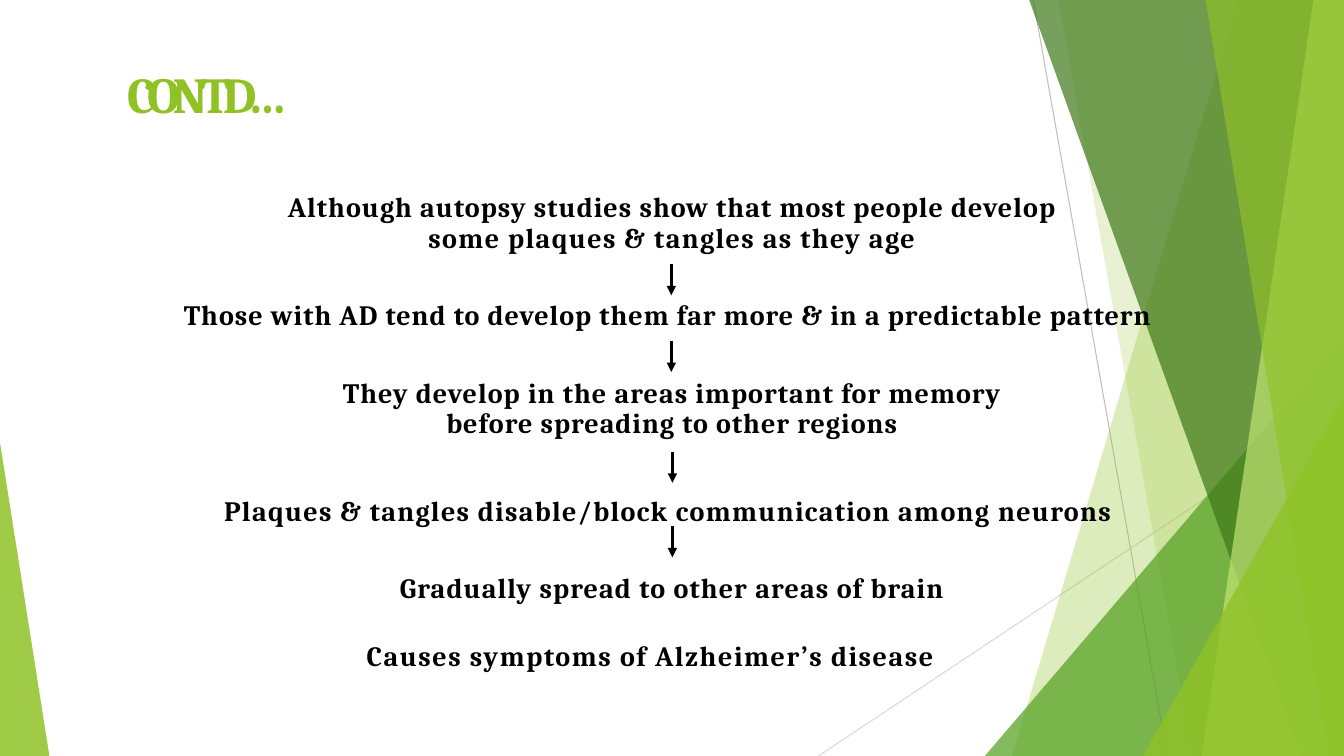
from dataclasses import dataclass

from lxml import etree
from pptx import Presentation
from pptx.dml.color import RGBColor
from pptx.enum.shapes import MSO_CONNECTOR, MSO_SHAPE
from pptx.enum.text import PP_ALIGN
from pptx.oxml.ns import qn
from pptx.util import Inches, Pt

STRAIGHT = MSO_CONNECTOR.STRAIGHT
TRIANGLE = MSO_SHAPE.ISOSCELES_TRIANGLE
LEFT, CENTER = PP_ALIGN.LEFT, PP_ALIGN.CENTER


@dataclass(frozen=True)
class Theme:
    font: str = "Cambria"
    title_size: float = 36
    body_size: float = 20
    ink: str = "000000"
    lime: str = "90C226"
    pale: str = "C0E474"
    leaf: str = "54A021"
    forest: str = "3F7819"
    grey: str = "BFBFBF"
    light_grey: str = "D9D9D9"


class Deck:
    """Draws on one slide; lengths are percent of the slide's width and height."""

    def __init__(self, prs, theme):
        self.theme = theme
        self.col, self.row = prs.slide_width / 100, prs.slide_height / 100
        self.s = prs.slides.add_slide(prs.slide_layouts[6])

    def at(self, x, y):
        return round(x * self.col), round(y * self.row)

    def paint(self, sp, color, opacity):
        sp.shadow.inherit = False
        sp.fill.solid()
        sp.fill.fore_color.rgb = RGBColor.from_string(color)
        sp.line.fill.background()
        clr = sp._element.spPr.find(qn("a:solidFill")).find(qn("a:srgbClr"))
        etree.SubElement(clr, qn("a:alpha"), val=str(opacity * 1000))

    def facet(self, top, bottom, color, opacity):
        """Panel with a slanted left edge that reaches the right edge of the slide."""
        points = [self.at(x, y) for x, y in
                  ((top, 0), (100, 0), (100, 100), (bottom, 100))]
        fb = self.s.shapes.build_freeform(*points[0], scale=1.0)
        fb.add_line_segments(points[1:], close=True)
        self.paint(fb.convert_to_shape(), color, opacity)

    def corner(self, x, y, width, apex, color, opacity):
        """Right triangle standing on the bottom edge."""
        sp = self.s.shapes.add_shape(
            TRIANGLE, *self.at(x, y), *self.at(width, 100 - y))
        sp.adjustments[0] = apex
        self.paint(sp, color, opacity)

    def line(self, x1, y1, x2, y2, color, width, arrow=False):
        cn = self.s.shapes.add_connector(
            STRAIGHT, *self.at(x1, y1), *self.at(x2, y2))
        cn.line.color.rgb = RGBColor.from_string(color)
        cn.line.width = Pt(width)
        spPr = cn._element.spPr
        if arrow:
            etree.SubElement(spPr.find(qn("a:ln")), qn("a:tailEnd"), type="triangle")
        etree.SubElement(spPr, qn("a:effectLst"))

    def text_box(self, x, y, width, height):
        tf = self.s.shapes.add_textbox(
            *self.at(x, y), *self.at(width, height)).text_frame
        tf.word_wrap = True
        tf.margin_left = tf.margin_right = tf.margin_bottom = 0
        tf.margin_top = Inches(0.02)
        return tf

    def set_text(self, p, text, size, color, tracking, align=LEFT):
        p.text = text
        p.alignment = align
        for r in p.runs:
            r.font.name, r.font.size, r.font.bold = self.theme.font, Pt(size), True
            r.font.color.rgb = RGBColor.from_string(color)
            r._r.get_or_add_rPr().set("spc", str(round(tracking * 100)))

    def title(self, text, *box):
        p = self.text_box(*box).paragraphs[0]
        self.set_text(p, text, self.theme.title_size, self.theme.lime, -5)
        p.space_before = Pt(1.3)

    def steps(self, lines, *box):
        """Centred lines: text, line pitch and tracking in points, right margin in inches."""
        tf = self.text_box(*box)
        for i, (text, pitch, tracking, right) in enumerate(lines):
            p = tf.add_paragraph() if i else tf.paragraphs[0]
            self.set_text(p, text, self.theme.body_size, self.theme.ink, tracking, CENTER)
            p.line_spacing = Pt(pitch)
            p.space_before = Pt(0 if i else 1.3)
            p._p.get_or_add_pPr().set("marR", str(Inches(right)))


STEPS = [
    ("Although autopsy studies show that most people develop", 22.5, 0.75, 0),
    ("some plaques & tangles as they age", 22.5, 1, 0),
    ("Those with AD tend to develop them far more & in a predictable pattern",
     55, 0.72, 0.08),
    ("They develop in the areas important for memory", 55.6, 0.73, 0),
    ("before spreading to other regions", 21.1, 0.7, 0),
    ("Plaques & tangles disable/block communication among neurons", 62.7, 0.93, 0.08),
    ("Gradually spread to other areas of brain", 55.6, 0.8, 0),
    ("Causes symptoms of Alzheimer’s disease", 48.6, 1.1, 0.43),
]
ARROWS = [(49.95, 34.93), (49.95, 45.07), (50.03, 59.73), (50.03, 69.6)]
ARROW_LENGTH = 4.13


def main():
    prs = Presentation()
    prs.slide_width, prs.slide_height = Inches(13.33), Inches(7.5)
    t = Theme()
    d = Deck(prs, t)

    # Background lines and green facets
    d.line(76.88, 0, 86.85, 100, t.grey, 0.75)
    d.line(100, 53.73, 60.9, 100, t.light_grey, 0.75)
    d.facet(92.1, 75.3, t.lime, 30)
    d.facet(78.75, 88.73, t.lime, 20)
    d.corner(73.28, 44.4, 26.72, 1, t.leaf, 72)
    d.facet(76.58, 96.83, t.forest, 70)
    d.facet(97.73, 89.4, t.pale, 70)
    d.facet(89.7, 98.85, t.lime, 65)
    d.corner(85.05, 52.4, 14.95, 1, t.lime, 80)
    d.corner(0, 58.53, 3.68, 0, t.lime, 85)

    # Title and steps
    d.title("CONTD…", 9.45, 8.13, 17.25, 10.27)
    d.steps(STEPS, 13.43, 25.07, 73.13, 64)

    # Arrows between the steps
    for x, y in ARROWS:
        d.line(x, y, x, y + ARROW_LENGTH, t.ink, 2.25, arrow=True)

    prs.save("out.pptx")


if __name__ == "__main__":
    main()
